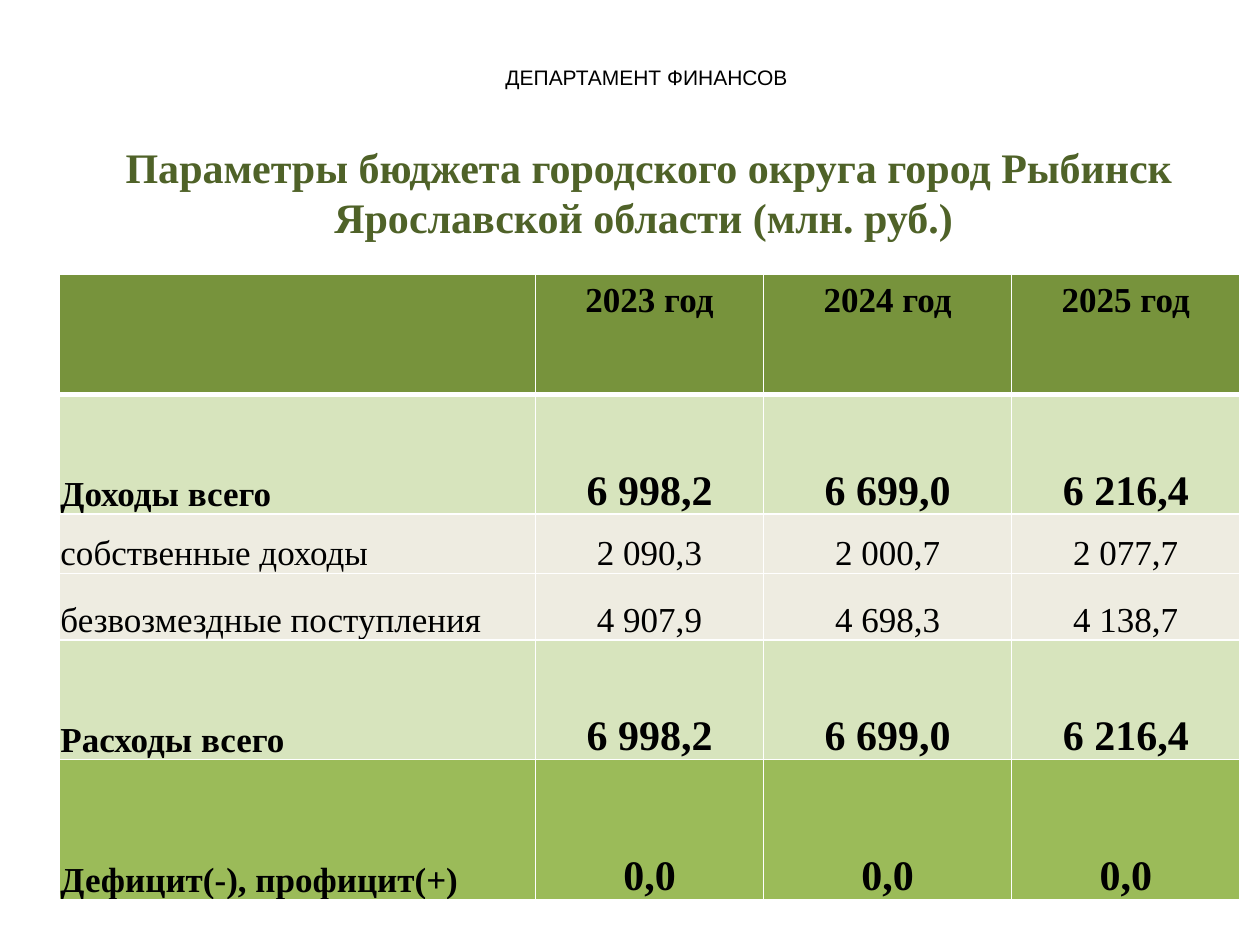
import pptx
import pptx.util
import pptx.dml.color
import pptx.enum.text
import pptx.oxml
import pptx.oxml.ns

COLORS = {
    "text": "000000",
    "title": "4F6228",
    "rule": "FFFFFF",
    "header": "77933C",
    "total": "D7E4BD",
    "detail": "EEECE1",
    "balance": "9BBB59",
}
SERIF = "Times New Roman"
CENTER = pptx.enum.text.PP_ALIGN.CENTER
LEFT = pptx.enum.text.PP_ALIGN.LEFT
TOP = pptx.enum.text.MSO_ANCHOR.TOP
BOTTOM = pptx.enum.text.MSO_ANCHOR.BOTTOM

COLUMN_WIDTHS = [3.78, 1.81, 1.97, 1.81]
ROWS = [
    (0.95, "header", ["", "2023 год", "2024 год", "2025 год"]),
    (0.95, "total", ["Доходы всего", "6 998,2", "6 699,0", "6 216,4"]),
    (0.47, "detail", ["собственные доходы", "2 090,3", "2 000,7", "2 077,7"]),
    (0.53, "detail", ["безвозмездные поступления", "4 907,9", "4 698,3", "4 138,7"]),
    (0.95, "total", ["Расходы всего", "6 998,2", "6 699,0", "6 216,4"]),
    (1.11, "balance", ["Дефицит(-), профицит(+)", "0,0", "0,0", "0,0"]),
]


class BudgetPage:
    def __init__(self, deck):
        self.deck = deck
        self.page = deck.slides.add_slide(deck.slide_layouts[5])

    def area(self, left, top, width, height):
        across, down = self.deck.slide_width, self.deck.slide_height
        return [int(left * across), int(top * down), int(width * across), int(height * down)]

    def add_text(self, frame, text, color="text", align=CENTER, **font):
        para = frame.paragraphs[0]
        para.alignment = align
        span = para.add_run()
        span.text = text
        for name, value in font.items():
            setattr(span.font, name, value)
        span.font.color.rgb = pptx.dml.color.RGBColor.from_string(COLORS[color])

    def set_frame(self, frame):
        settings = {
            "word_wrap": True,
            "auto_size": pptx.enum.text.MSO_AUTO_SIZE.NONE,
            "vertical_anchor": TOP,
        }
        for name, value in settings.items():
            setattr(frame, name, value)

    def title(self, text, share):
        box = self.page.shapes.title
        for name, value in zip(("left", "top", "width", "height"), self.area(*share)):
            setattr(box, name, value)
        self.set_frame(box.text_frame)
        self.add_text(box.text_frame, text, "title",
                      name=SERIF, size=pptx.util.Pt(24), bold=True)

    def label(self, text, share):
        box = self.page.shapes.add_textbox(*self.area(*share))
        self.set_frame(box.text_frame)
        self.add_text(box.text_frame, text, name="Arial", size=pptx.util.Pt(12))

    def border(self, cell, side, points):
        line = pptx.oxml.parse_xml(
            f'<a:{side} {pptx.oxml.ns.nsdecls("a")} w="{pptx.util.Pt(points)}">'
            f'<a:solidFill><a:srgbClr val="{COLORS["rule"]}"/></a:solidFill></a:{side}>')
        cell._tc.get_or_add_tcPr().append(line)

    def cell(self, cell, text, kind, is_label, after_header):
        header = kind == "header"
        sides = {"lnL": 1, "lnR": 1, "lnT": 3 if after_header else 1, "lnB": 3 if header else 1}
        for side, points in sides.items():
            self.border(cell, side, points)
        cell.fill.solid()
        cell.fill.fore_color.rgb = pptx.dml.color.RGBColor.from_string(COLORS[kind])
        if header:
            cell.vertical_anchor = TOP
        else:
            edge = pptx.util.Inches(0.01)
            layout = {"margin_left": edge, "margin_top": edge, "margin_right": edge,
                      "margin_bottom": 0, "vertical_anchor": BOTTOM}
            for name, value in layout.items():
                setattr(cell, name, value)
        if text:
            large = kind in ("total", "balance") and not is_label
            self.add_text(cell.text_frame, text, align=LEFT if is_label else CENTER,
                          name=SERIF, size=pptx.util.Pt(24 if large else 20),
                          bold=kind != "detail")

    def table(self, rows, widths, share):
        frame = self.page.shapes.add_table(len(rows), len(widths), *self.area(*share))
        table = frame.table
        for column, width in zip(table.columns, widths):
            column.width = pptx.util.Inches(width)
        for r, (height, kind, texts) in enumerate(rows):
            table.rows[r].height = pptx.util.Inches(height)
            for c, text in enumerate(texts):
                self.cell(table.cell(r, c), text, kind, c == 0, r == 1)


def main():
    deck = pptx.Presentation()
    deck.slide_width = pptx.util.Inches(10)
    deck.slide_height = pptx.util.Inches(7.5)
    budget = BudgetPage(deck)
    budget.label("ДЕПАРТАМЕНТ ФИНАНСОВ ", (0.358, 0.46 / 7.5, 0.315, 0.04))
    budget.title("Параметры бюджета городского округа город Рыбинск "
                 "Ярославской области (млн. руб.) ", (0.07, 1.07 / 7.5, 0.89, 0.91 / 7.5))
    budget.table(ROWS, COLUMN_WIDTHS, (0.047, 2.18 / 7.5, 0.937, 4.96 / 7.5))
    deck.save("out.pptx")


if __name__ == "__main__":
    main()
